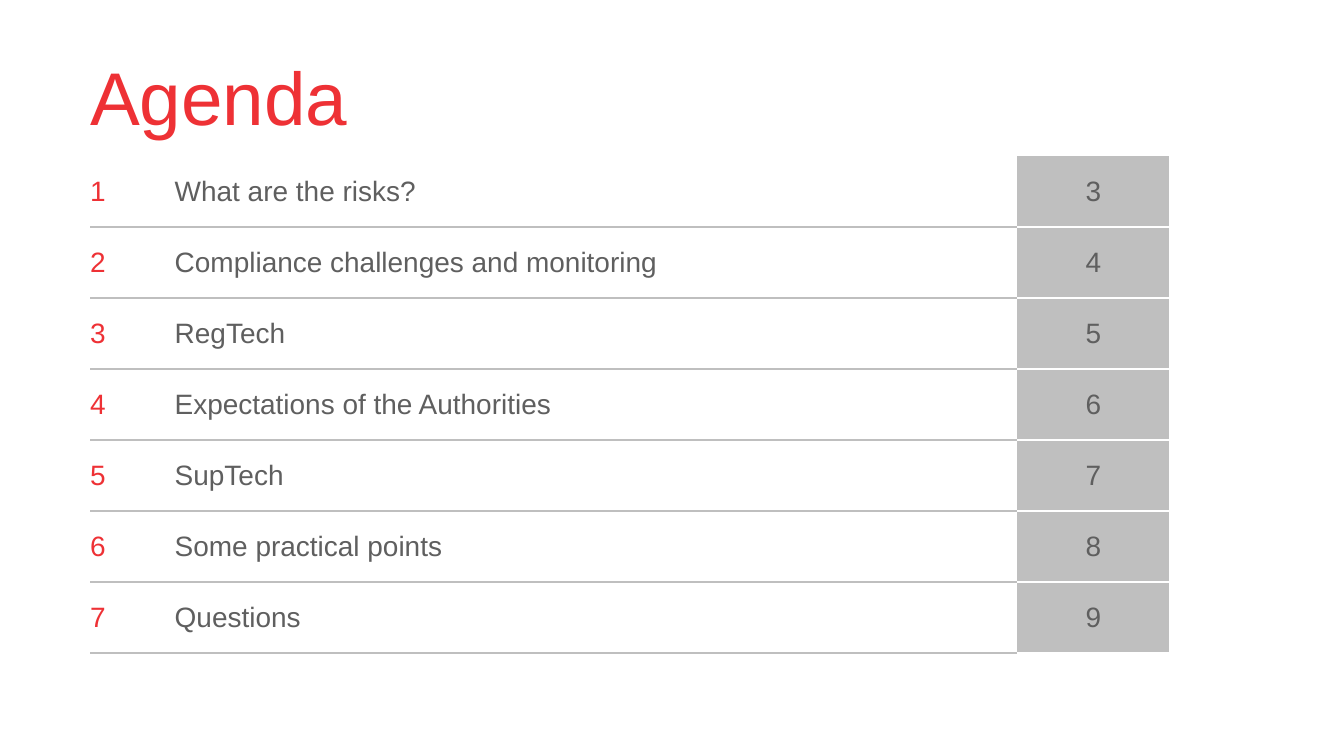
from dataclasses import dataclass

from lxml import etree
from pptx import Presentation
from pptx.dml.color import RGBColor
from pptx.enum.text import MSO_ANCHOR, MSO_AUTO_SIZE, PP_ALIGN
from pptx.oxml.ns import qn
from pptx.util import Inches, Pt

LEFT, CENTER = PP_ALIGN.LEFT, PP_ALIGN.CENTER
BOTTOM, MIDDLE = MSO_ANCHOR.BOTTOM, MSO_ANCHOR.MIDDLE
NO_FIT = MSO_AUTO_SIZE.NONE

TITLE = "Agenda"
TOPICS = [
    "What are the risks?",
    "Compliance challenges and monitoring",
    "RegTech",
    "Expectations of the Authorities",
    "SupTech",
    "Some practical points",
    "Questions",
]
FIRST_PAGE = 3


@dataclass(frozen=True)
class Theme:
    font: str = "Arial"
    accent: str = "EE3135"
    text: str = "5F5F5F"
    gray: str = "BFBFBF"
    white: str = "FFFFFF"
    title_size: int = 40
    body_size: int = 15
    rule_width: int = 1


THEME = Theme()
SLIDE_WIDTH = 10
SLIDE_HEIGHT = SLIDE_WIDTH * 9 / 16
MARGIN = 0.67
TABLE_TOP = 1.16
TABLE_HEIGHT = 3.7
ROW_HEIGHT = TABLE_HEIGHT / len(TOPICS)
COLUMN_WIDTHS = [0.63, 6.27, 1.13]
COLUMN_STYLES = [
    (THEME.accent, LEFT, None, THEME.gray),
    (THEME.text, LEFT, None, THEME.gray),
    (THEME.text, CENTER, THEME.gray, THEME.white),
]


def format_text(frame, size, color, align):
    for para in frame.paragraphs:
        para.alignment = align
        for span in para.runs:
            span.font.name = THEME.font
            span.font.size = Pt(size)
            span.font.bold = False
            span.font.color.rgb = RGBColor.from_string(color)


def set_borders(cell, top, bottom):
    properties = cell._tc.get_or_add_tcPr()
    sides = [("lnL", None), ("lnR", None), ("lnT", top), ("lnB", bottom)]
    for position, (tag, color) in enumerate(sides):
        line = etree.Element(qn(f"a:{tag}"), w=str(Pt(THEME.rule_width)))
        if color:
            fill = etree.SubElement(line, qn("a:solidFill"))
            etree.SubElement(fill, qn("a:srgbClr"), val=color)
        else:
            etree.SubElement(line, qn("a:noFill"))
        properties.insert(position, line)


def add_title(page):
    title = page.shapes.title
    title.left, title.top = Inches(MARGIN), Inches(0.42)
    title.width, title.height = Inches(8.97), Inches(0.63)
    frame = title.text_frame
    frame.text = TITLE
    frame.word_wrap = True
    frame.auto_size = NO_FIT
    frame.vertical_anchor = BOTTOM
    frame.margin_left = frame.margin_right = 0
    frame.margin_top = frame.margin_bottom = 0
    frame.paragraphs[0].line_spacing = 0.85
    format_text(frame, THEME.title_size, THEME.accent, LEFT)


def fill_cell(cell, text, style, is_first):
    color, align, fill, rule = style
    cell.text_frame.text = text
    cell.vertical_anchor = MIDDLE
    cell.margin_left = cell.margin_right = 0
    cell.margin_top = cell.margin_bottom = Inches(0.06)
    if fill:
        cell.fill.solid()
        cell.fill.fore_color.rgb = RGBColor.from_string(fill)
    else:
        cell.fill.background()
    set_borders(cell, None if is_first else rule, rule)
    format_text(cell.text_frame, THEME.body_size, color, align)


def add_agenda(page):
    table = page.shapes.add_table(
        len(TOPICS), len(COLUMN_WIDTHS), Inches(MARGIN), Inches(TABLE_TOP),
        Inches(sum(COLUMN_WIDTHS)), Inches(TABLE_HEIGHT),
    ).table
    table.first_row = table.horz_banding = False
    for column, width in zip(table.columns, COLUMN_WIDTHS):
        column.width = Inches(width)
    for index, topic in enumerate(TOPICS):
        table.rows[index].height = Inches(ROW_HEIGHT)
        entries = [str(index + 1), topic, str(FIRST_PAGE + index)]
        for cell, text, style in zip(table.rows[index].cells, entries, COLUMN_STYLES):
            fill_cell(cell, text, style, index == 0)


def main():
    deck = Presentation()
    deck.slide_width, deck.slide_height = Inches(SLIDE_WIDTH), Inches(SLIDE_HEIGHT)
    page = deck.slides.add_slide(deck.slide_layouts[5])
    add_title(page)
    add_agenda(page)
    deck.save("out.pptx")


if __name__ == "__main__":
    main()
